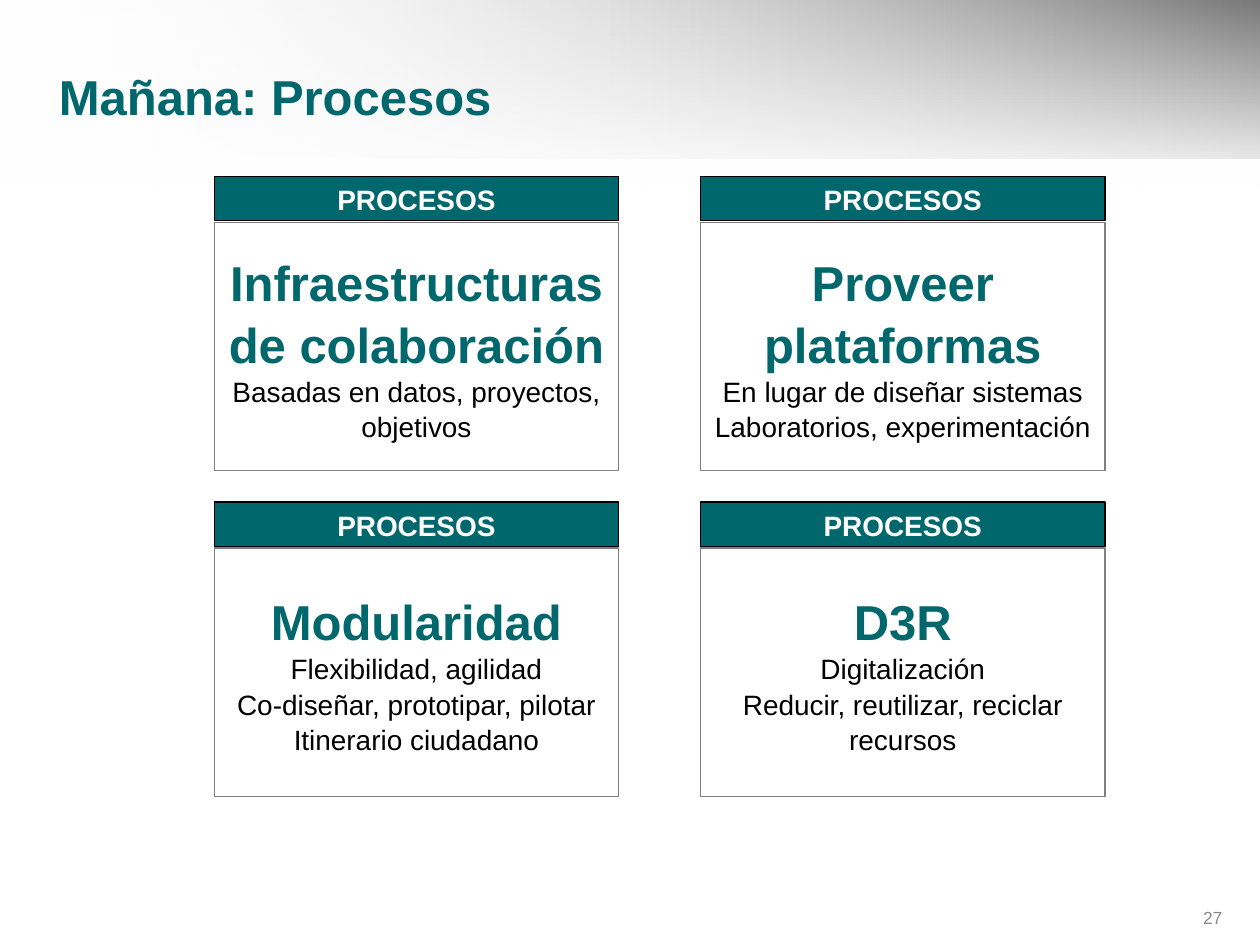
from lxml.etree import SubElement
from pptx import Presentation
from pptx.dml.color import RGBColor
from pptx.enum.shapes import MSO_SHAPE
from pptx.enum.text import MSO_ANCHOR, PP_ALIGN
from pptx.oxml.ns import qn
from pptx.util import Inches, Pt

TEAL = RGBColor(0x00, 0x67, 0x6C)
WHITE = RGBColor(0xFF, 0xFF, 0xFF)
BLACK = RGBColor(0x00, 0x00, 0x00)
GRAY = RGBColor(0x7F, 0x7F, 0x7F)
PALE = RGBColor(0x89, 0x89, 0x89)

TITLE = "Mañana: Procesos"
NUMBER = "27"
LABEL = "PROCESOS"
CARDS = [
    ("Infraestructuras de colaboración", ["Basadas en datos, proyectos, objetivos"]),
    ("Proveer plataformas",
     ["En lugar de diseñar sistemas", "Laboratorios, experimentación"]),
    ("Modularidad",
     ["Flexibilidad, agilidad", "Co-diseñar, prototipar, pilotar", "Itinerario ciudadano"]),
    ("D3R", ["Digitalización", "Reducir, reutilizar, reciclar recursos"]),
]
BANDS = [
    (1.26, 0, [(0, WHITE, 0), (100, BLACK, 100)]),
    (1.5, 90, [(0, WHITE, 47), (100, WHITE, 100)]),
]

COLS = 2
LEFT, TOP = 1.7, 1.4
STEP_X, STEP_Y = 3.86, 2.585
CARD_W, HEAD_H, BODY_H = 3.21, 0.35, 1.97
BODY_DY = 0.365


def put_text(shape, rows, align, spacing=1.0):
    frame = shape.text_frame
    frame.word_wrap = True
    frame.vertical_anchor = MSO_ANCHOR.MIDDLE
    for i, (text, size, color, bold) in enumerate(rows):
        para = frame.add_paragraph() if i else frame.paragraphs[0]
        para.text = text
        para.alignment = align
        para.line_spacing = spacing
        font = para.font
        font.name, font.size, font.bold = "Arial", Pt(size), bold
        font.color.rgb = color


def add_label(slide, box, row, align):
    label = slide.shapes.add_textbox(*map(Inches, box))
    put_text(label, [row], align)


def add_rect(slide, box):
    rect = slide.shapes.add_shape(MSO_SHAPE.RECTANGLE, *map(Inches, box))
    rect.shadow.inherit = False
    return rect


def add_box(slide, box, fill, line, rows):
    rect = add_rect(slide, box)
    rect.fill.solid()
    rect.fill.fore_color.rgb = fill
    rect.line.color.rgb = line
    rect.line.width = Pt(0)
    put_text(rect, rows, PP_ALIGN.CENTER, 1.05)


def add_band(slide, high, angle, stops):
    band = add_rect(slide, (0, 0, 10, high))
    band.line.fill.background()
    band.fill.gradient()
    band.fill.gradient_angle = -angle % 360
    for stop, (pos, color, alpha) in zip(band.fill.gradient_stops, stops):
        stop.position = pos / 100
        stop.color.rgb = color
    tints = band.fill._fill._gradFill.iter(qn("a:srgbClr"))
    for tint, (pos, color, alpha) in zip(list(tints), stops):
        SubElement(tint, qn("a:alpha"), val=str(alpha * 1000))


def main():
    deck = Presentation()
    deck.slide_width, deck.slide_height = Inches(10), Inches(7.5)
    slide = deck.slides.add_slide(deck.slide_layouts[6])

    for band in BANDS:
        add_band(slide, *band)
    add_label(slide, (9.17, 7.14, 0.63, 0.29), (NUMBER, 10, PALE, False), PP_ALIGN.RIGHT)
    add_label(slide, (0.37, 0.45, 9.2, 0.63), (TITLE, 28, TEAL, True), PP_ALIGN.LEFT)

    for i, (name, notes) in enumerate(CARDS):
        row, col = divmod(i, COLS)
        x, y = LEFT + col * STEP_X, TOP + row * STEP_Y
        rows = [(name, 28, TEAL, True)] + [(note, 16, BLACK, False) for note in notes]
        add_box(slide, (x, y + BODY_DY, CARD_W, BODY_H), WHITE, GRAY, rows)
        add_box(slide, (x, y, CARD_W, HEAD_H), TEAL, BLACK, [(LABEL, 16, WHITE, True)])

    deck.save("out.pptx")


if __name__ == "__main__":
    main()
